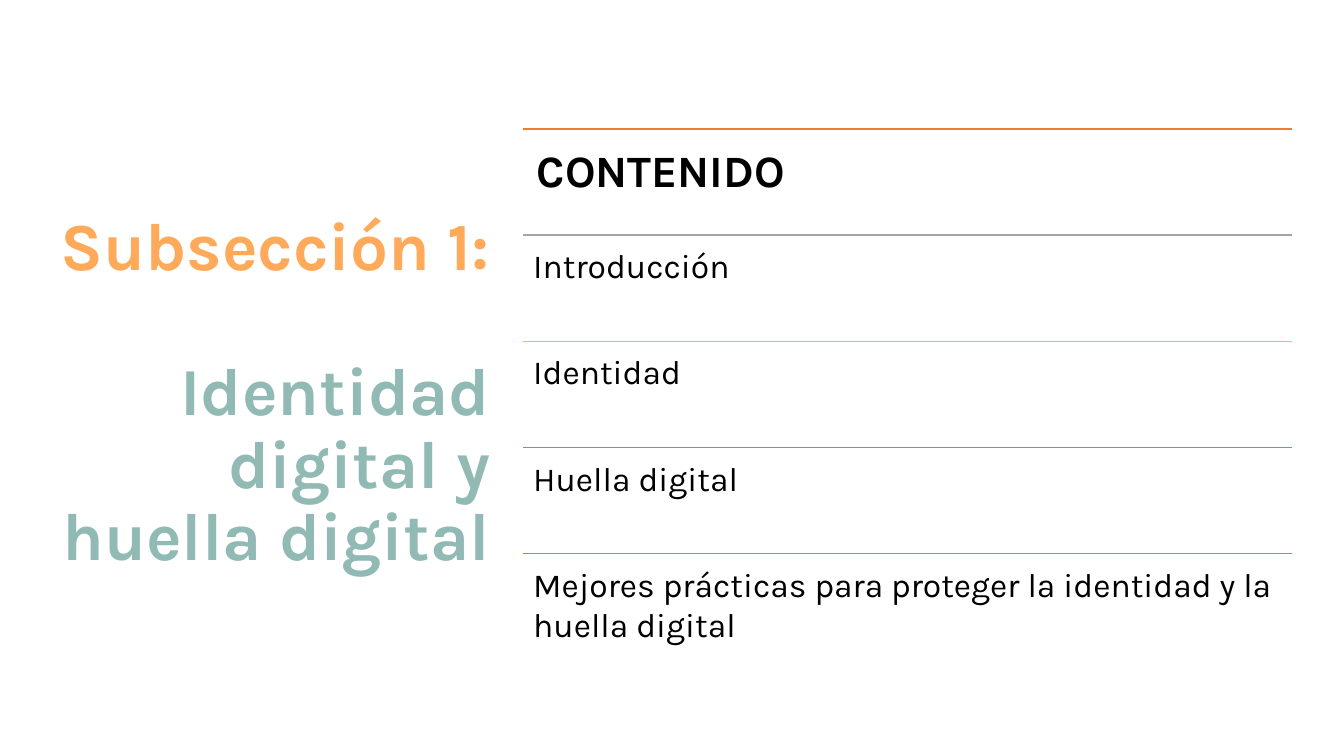
"""Build the contents slide of subsection 1 on digital identity."""
import pptx
import pptx.dml.color
import pptx.enum.shapes
import pptx.enum.text
import pptx.oxml
import pptx.util

Pt = pptx.util.Pt
RGBColor = pptx.dml.color.RGBColor

FONT = "Karla"
BLACK = RGBColor(0x00, 0x00, 0x00)
APRICOT = RGBColor(0xFF, 0xAA, 0x5A)
SAGE = RGBColor(0x92, 0xBA, 0xB5)
ORANGE = RGBColor(0xED, 0x7D, 0x31)
GRAY = RGBColor(0xA5, 0xA5, 0xA5)
GOLD = RGBColor(0xFF, 0xC0, 0x00)
BLUE = RGBColor(0x5B, 0x9B, 0xD5)
GREEN = RGBColor(0x70, 0xAD, 0x47)

LIST_LEFT, LIST_TOP = 373.8, 92.2
LIST_WIDTH, ROW_HEIGHT = 549.2, 75.8


def style(paragraph, size, color, bold):
    paragraph.font.name = FONT
    paragraph.font.size = Pt(size)
    paragraph.font.bold = bold
    paragraph.font.color.rgb = color


presentation = pptx.Presentation()
presentation.slide_width = Pt(960)
presentation.slide_height = Pt(540)
slide = presentation.slides.add_slide(presentation.slide_layouts[5])

heading = slide.shapes.title
heading.left, heading.top = Pt(27.4), Pt(61.2)
heading.width, heading.height = Pt(329.8), Pt(439.9)
heading_text = heading.text_frame
heading_text.word_wrap = True
heading_text.auto_size = pptx.enum.text.MSO_AUTO_SIZE.NONE
heading_text.vertical_anchor = pptx.enum.text.MSO_ANCHOR.MIDDLE
heading_text.text = "Subsección 1:\nIdentidad digital y huella digital"
for line, color in zip(heading_text.paragraphs, (APRICOT, SAGE)):
    line.alignment = pptx.enum.text.PP_ALIGN.RIGHT
    line.line_spacing = 0.9
    style(line, 48, color, True)
heading_text.paragraphs[1].space_before = Pt(52)

contents = [
    ("CONTENIDO", ORANGE, 32, True, 9.6),
    ("Introducción", GRAY, 24, False, 7.2),
    ("Identidad", GOLD, 24, False, 7.2),
    ("Huella digital", BLUE, 24, False, 7.2),
    ("Mejores prácticas para proteger la identidad y la huella digital",
     GREEN, 24, False, 7.2),
]
for index, (topic, rule_color, size, bold, inset) in enumerate(contents):
    top = LIST_TOP + index * ROW_HEIGHT

    rule = slide.shapes.add_connector(
        pptx.enum.shapes.MSO_CONNECTOR.STRAIGHT,
        Pt(LIST_LEFT), Pt(top), Pt(LIST_LEFT + LIST_WIDTH), Pt(top))
    rule.line.color.rgb = rule_color
    rule.line.width = Pt(1)
    rule._element.spPr.append(pptx.oxml.parse_xml(
        '<a:effectLst xmlns:a="http://schemas.openxmlformats.org/drawingml/2006/main"/>'))

    entry = slide.shapes.add_textbox(
        Pt(LIST_LEFT), Pt(top), Pt(LIST_WIDTH), Pt(ROW_HEIGHT)).text_frame
    entry.word_wrap = True
    entry.margin_left = entry.margin_right = Pt(inset)
    entry.margin_top = entry.margin_bottom = Pt(inset)
    entry.text = topic
    style(entry.paragraphs[0], size, BLACK, bold)

presentation.save("out.pptx")
